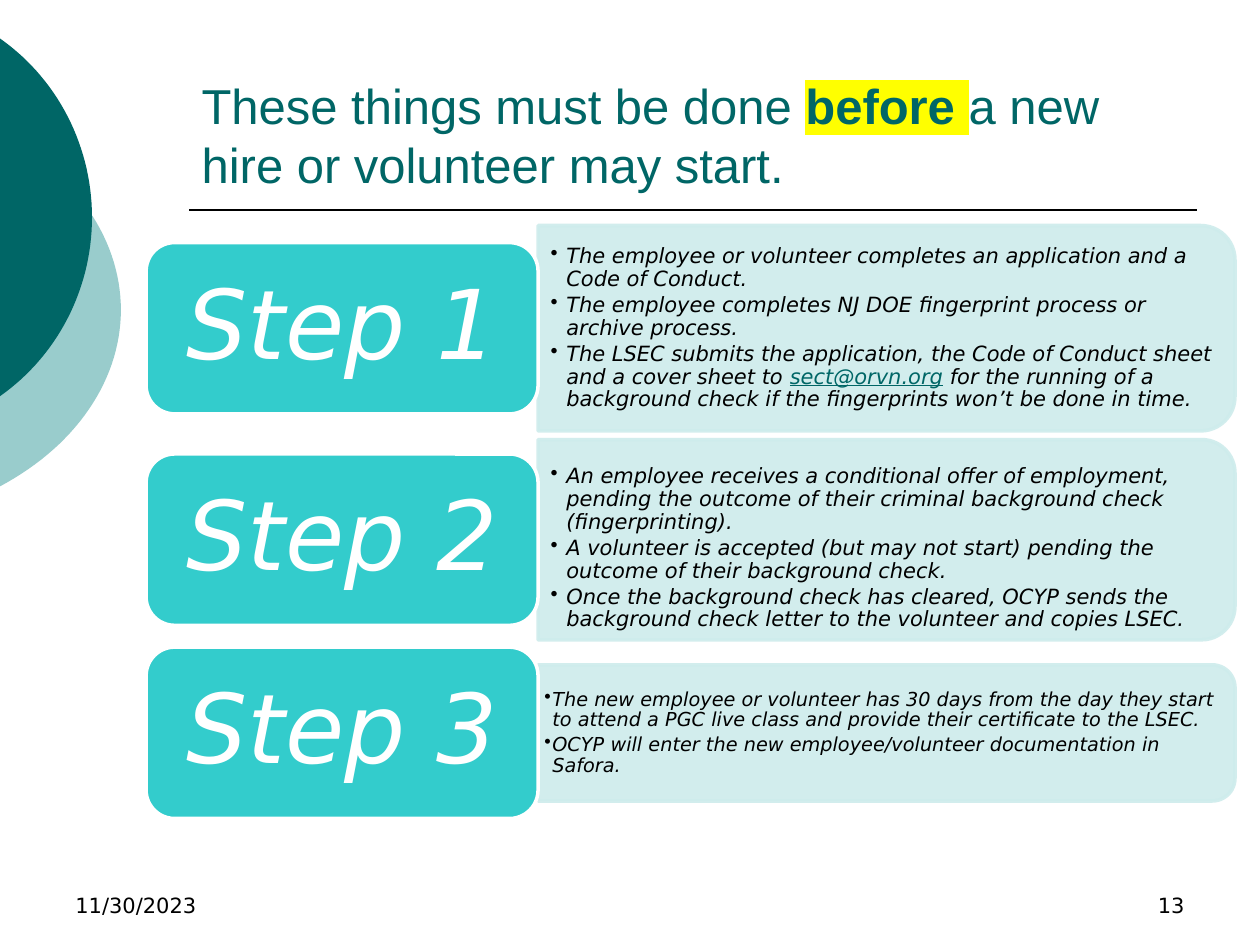
import math

from lxml import etree
from pptx import Presentation, util as u
from pptx.dml.color import RGBColor
from pptx.enum import shapes, text
from pptx.oxml.ns import qn

TEAL, PALE, TURQUOISE, MIST = "006666", "99CCCC", "33CCCC", "CEECEC"
BLACK, WHITE, YELLOW = "000000", "FFFFFF", "FFFF00"


def rgb(color):
    return RGBColor.from_string(color)


def add_run(p, content, size=12, color=BLACK, font="DejaVu Sans", bold=False,
            italic=False, underline=False, highlight=None):
    r = p.add_run()
    r.text = content
    f = r.font
    f.size, f.name, f.bold, f.italic = u.Pt(size), font, bold, italic
    f.color.rgb = rgb(color)
    if underline:
        f.underline = True
    if highlight:
        mark = etree.Element(qn("a:highlight"))
        etree.SubElement(mark, qn("a:srgbClr"), val=highlight)
        r._r.rPr.find(qn("a:solidFill")).addnext(mark)


def add_bullet(p, indent):
    pPr = p._p.get_or_add_pPr()
    pPr.set("marL", str(u.Pt(indent)))
    pPr.set("indent", str(-u.Pt(indent)))
    etree.SubElement(pPr, qn("a:buChar"), char="•")


def set_opacity(color_format_parent, percent):
    for clr in color_format_parent.iter(qn("a:srgbClr")):
        etree.SubElement(clr, qn("a:alpha"), val=str(percent * 1000))


class Deck:
    """Holds the style and the slide being built."""

    def __init__(self, width, height):
        self.prs = Presentation()
        self.prs.slide_width, self.prs.slide_height = u.Pt(width), u.Pt(height)
        self.s = self.prs.slides.add_slide(self.prs.slide_layouts[5])

    def paint(self, sp, fill, line=None, width=2):
        sp.shadow.inherit = False
        sp.fill.solid()
        sp.fill.fore_color.rgb = rgb(fill)
        if line:
            sp.line.color.rgb = rgb(line)
            sp.line.width = u.Pt(width)
        else:
            sp.line.fill.background()

    def ellipse_segment(self, cx, cy, rx, ry, fill):
        """Draw the part of an ellipse right of the slide's left edge."""
        end = math.acos(-cx / rx)
        steps = 60
        angles = [end * (2 * i / steps - 1) for i in range(steps + 1)]
        points = [(u.Pt(cx + rx * math.cos(a)), u.Pt(cy + ry * math.sin(a)))
                  for a in angles]
        builder = self.s.shapes.build_freeform(*points[0], scale=1.0)
        builder.add_line_segments(points[1:], close=True)
        self.paint(builder.convert_to_shape(), fill)

    def rule(self, x1, x2, y):
        line = self.s.shapes.add_connector(
            shapes.MSO_CONNECTOR.STRAIGHT, u.Pt(x1), u.Pt(y), u.Pt(x2), u.Pt(y))
        line.line.color.rgb = rgb(BLACK)
        line.line.width = u.Pt(1)
        etree.SubElement(line._element.spPr, qn("a:effectLst"))

    def title(self, box, runs):
        sp = self.s.shapes.title
        sp.left, sp.top, sp.width, sp.height = map(u.Pt, box)
        tf = sp.text_frame
        tf.auto_size = text.MSO_AUTO_SIZE.NONE
        tf.vertical_anchor = text.MSO_ANCHOR.BOTTOM
        p = tf.paragraphs[0]
        p.alignment = text.PP_ALIGN.LEFT
        for content, fmt in runs:
            add_run(p, content, size=28, color=TEAL, font="Arial", **fmt)

    def text_box(self, box, anchor):
        tf = self.s.shapes.add_textbox(*map(u.Pt, box)).text_frame
        tf.word_wrap = True
        tf.vertical_anchor = anchor
        return tf

    def footer(self, box, content, align):
        p = self.text_box(box, text.MSO_ANCHOR.BOTTOM).paragraphs[0]
        p.alignment = align
        add_run(p, content)

    def panel(self, left, middle, width, height):
        """Draw a panel whose two right corners are round."""
        x, y = left + (width - height) / 2, middle - width / 2
        sp = self.s.shapes.add_shape(
            shapes.MSO_SHAPE.ROUND_2_SAME_RECTANGLE,
            *map(u.Pt, (x, y, height, width)))
        sp.rotation = 90
        self.paint(sp, MIST, MIST)
        set_opacity(sp._element.spPr, 90)

    def bullets(self, box, items, size, indent, margin):
        tf = self.text_box(box, text.MSO_ANCHOR.MIDDLE)
        tf.margin_left = tf.margin_right = u.Pt(margin)
        tf.margin_top = tf.margin_bottom = u.Pt(margin / 2)
        for i, runs in enumerate(items):
            p = tf.add_paragraph() if i else tf.paragraphs[0]
            p.line_spacing = 0.9
            p.space_after = u.Pt(2)
            add_bullet(p, indent)
            for content, fmt in runs:
                add_run(p, content, size=size, italic=True, **fmt)

    def step_label(self, left, middle, width, height, content):
        sp = self.s.shapes.add_shape(
            shapes.MSO_SHAPE.ROUNDED_RECTANGLE,
            *map(u.Pt, (left, middle - height / 2, width, height)))
        self.paint(sp, TURQUOISE, WHITE)
        tf = sp.text_frame
        tf.vertical_anchor = text.MSO_ANCHOR.MIDDLE
        p = tf.paragraphs[0]
        p.alignment = text.PP_ALIGN.CENTER
        p.line_spacing = 0.9
        add_run(p, content, size=55, color=WHITE, italic=True)


def plain(*lines):
    return [[(line, {})] for line in lines]


APPLY = plain(
    "The employee or volunteer completes an application and a Code of Conduct.",
    "The employee completes NJ DOE fingerprint process or archive process.",
) + [[
    ("The LSEC submits the application, the Code of Conduct sheet and a cover sheet to ", {}),
    ("sect@orvn.org", {"color": TEAL, "underline": True}),
    (" for the running of a background check if the fingerprints won’t be done in time.", {}),
]]
CLEAR = plain(
    "An employee receives a conditional offer of employment, pending the outcome of "
    "their criminal background check (fingerprinting).",
    "A volunteer is accepted (but may not start) pending the outcome of their background check.",
    "Once the background check has cleared, OCYP sends the background check letter to "
    "the volunteer and copies LSEC.",
)
TRAIN = plain(
    "The new employee or volunteer has 30 days from the day they start to attend a PGC "
    "live class and provide their certificate to the LSEC.",
    "OCYP will enter the new employee/volunteer documentation in Safora.",
)

# middle, panel height, text middle, text width, items, size, indent, margin
STEPS = [
    (187.6, 117.4, 187.6, 392.4, APPLY, 12, 9, 7.2),
    (308.4, 114.5, 313.5, 392.4, CLEAR, 12, 9, 7.2),
    (418.8, 77.8, 418.8, 394.6, TRAIN, 11, 4.5, 3.6),
]


def main():
    deck = Deck(720, 540)
    deck.ellipse_segment(-92.9, 177.1, 162, 123.1, PALE)
    deck.ellipse_segment(-69.1, 124.2, 121.7, 124.2, TEAL)
    deck.rule(108, 684, 120)
    deck.title((108, 24, 576, 90), [
        ("These things must be done ", {}),
        ("before ", {"bold": True, "highlight": YELLOW}),
        ("a new hire or volunteer may start.", {}),
    ])
    left, split, panel_width, label_height = 83.5, 307.5, 398.2, 97.9
    for n, (middle, height, text_middle, width, items, *style) in enumerate(STEPS, 1):
        deck.panel(split, middle, panel_width, height)
        text_height = height - 10
        deck.bullets((split, text_middle - text_height / 2, width, text_height),
                     items, *style)
        deck.step_label(left, middle, split - left, label_height, f"Step {n}")
    deck.footer((516, 492, 168, 36), "13", text.PP_ALIGN.RIGHT)
    deck.footer((36, 492, 168, 36), "11/30/2023", text.PP_ALIGN.LEFT)
    deck.prs.save("out.pptx")


if __name__ == "__main__":
    main()
